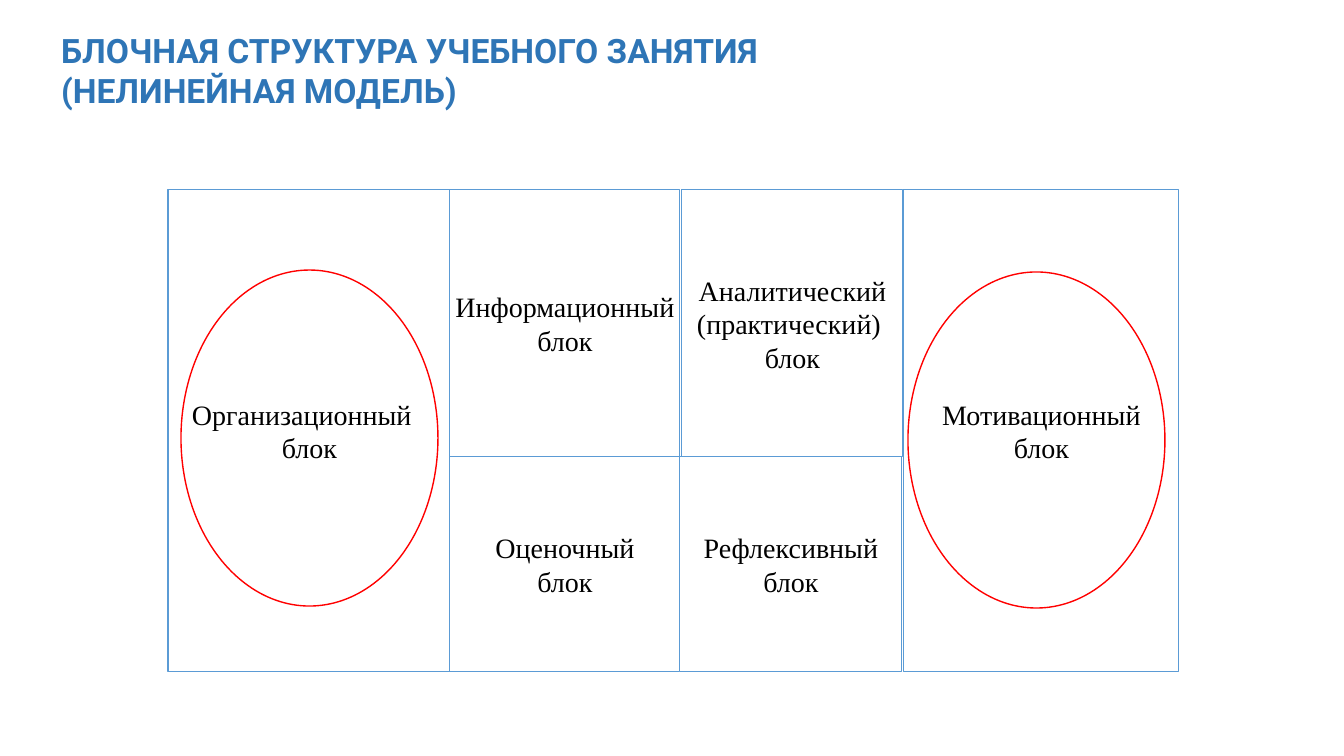
from pptx import Presentation
from pptx.dml.color import RGBColor
from pptx.enum.shapes import MSO_SHAPE as Preset
from pptx.enum.text import MSO_ANCHOR as Anchor, MSO_AUTO_SIZE as AutoSize, PP_ALIGN as Align
from pptx.util import Emu, Pt

WHITE = RGBColor(0xFF, 0xFF, 0xFF)
BLACK = RGBColor(0x00, 0x00, 0x00)
RED = RGBColor(0xFF, 0x00, 0x00)
BORDER_BLUE = RGBColor(0x5B, 0x9B, 0xD5)
TITLE_BLUE = RGBColor(0x2E, 0x75, 0xB6)

EMU_PER_PX = 914400 / 100.8
TITLE_FONT = {"name": "Roboto", "size": Pt(24), "bold": True}
BLOCK_FONT = {"name": "Times New Roman", "size": Pt(20), "bold": False}
TITLE_FRAME = {"word_wrap": True, "auto_size": AutoSize.NONE, "vertical_anchor": Anchor.TOP}
BLOCK_FRAME = {"word_wrap": False, "auto_size": AutoSize.NONE, "vertical_anchor": Anchor.MIDDLE}

TOP, MIDDLE, BOTTOM = 190, 457, 672
BLOCKS = [
    (168, 283, TOP, BOTTOM, ["Организационный", "блок"]),
    (904, 275, TOP, BOTTOM, ["Мотивационный", "блок"]),
    (450, 230, TOP, MIDDLE, ["Информационный", "блок"]),
    (680, 222, MIDDLE, BOTTOM, ["Рефлексивный", "блок"]),
    (682, 221, TOP, MIDDLE, ["Аналитический", "(практический) ", "блок"]),
    (450, 230, MIDDLE, BOTTOM, ["Оценочный", "блок"]),
]
OVALS = [(908, 272), (181, 270)]


def px(length):
    return Emu(round(length * EMU_PER_PX))


def apply(target, values):
    for name, value in values.items():
        setattr(target, name, value)


class SlideBuilder:
    def __init__(self, deck):
        self.page = deck.slides.add_slide(deck.slide_layouts[5])

    def fill_text(self, box, lines, frame_format, font_format, color, align):
        frame = box.text_frame
        apply(frame, frame_format)
        for index, line in enumerate(lines):
            para = frame.add_paragraph() if index else frame.paragraphs[0]
            para.alignment = align
            span = para.add_run()
            span.text = line
            apply(span.font, font_format)
            span.font.color.rgb = color
        return frame

    def title(self, left, top, width, height, lines):
        box = self.page.shapes.title
        apply(box, {"left": px(left), "top": px(top), "width": px(width), "height": px(height)})
        self.fill_text(box, lines, TITLE_FRAME, TITLE_FONT, TITLE_BLUE, Align.LEFT)

    def outline(self, preset, left, top, width, height, color, weight):
        box = self.page.shapes.add_shape(preset, px(left), px(top), px(width), px(height))
        box.shadow.inherit = False
        box.line.color.rgb = color
        box.line.width = Pt(weight)
        return box

    def block(self, left, width, top, bottom, lines):
        box = self.outline(Preset.RECTANGLE, left, top, width, bottom - top, BORDER_BLUE, 0.75)
        box.fill.solid()
        box.fill.fore_color.rgb = WHITE
        return self.fill_text(box, lines, BLOCK_FRAME, BLOCK_FONT, BLACK, Align.CENTER)

    def oval(self, left, top):
        self.outline(Preset.OVAL, left, top, 257, 336, RED, 1).fill.background()


def indent_left(para, length):
    para.alignment = Align.LEFT
    para._p.get_or_add_pPr().set("marL", str(px(length)))


def main():
    deck = Presentation()
    apply(deck, {"slide_width": px(1344), "slide_height": px(756)})
    builder = SlideBuilder(deck)
    builder.title(51, 25, 1055, 92, ["БЛОЧНАЯ СТРУКТУРА УЧЕБНОГО ЗАНЯТИЯ", "(НЕЛИНЕЙНАЯ МОДЕЛЬ)"])
    frames = [builder.block(*block) for block in BLOCKS]
    indent_left(frames[0].paragraphs[0], 14)
    for oval in OVALS:
        builder.oval(*oval)
    deck.save("out.pptx")


if __name__ == "__main__":
    main()
